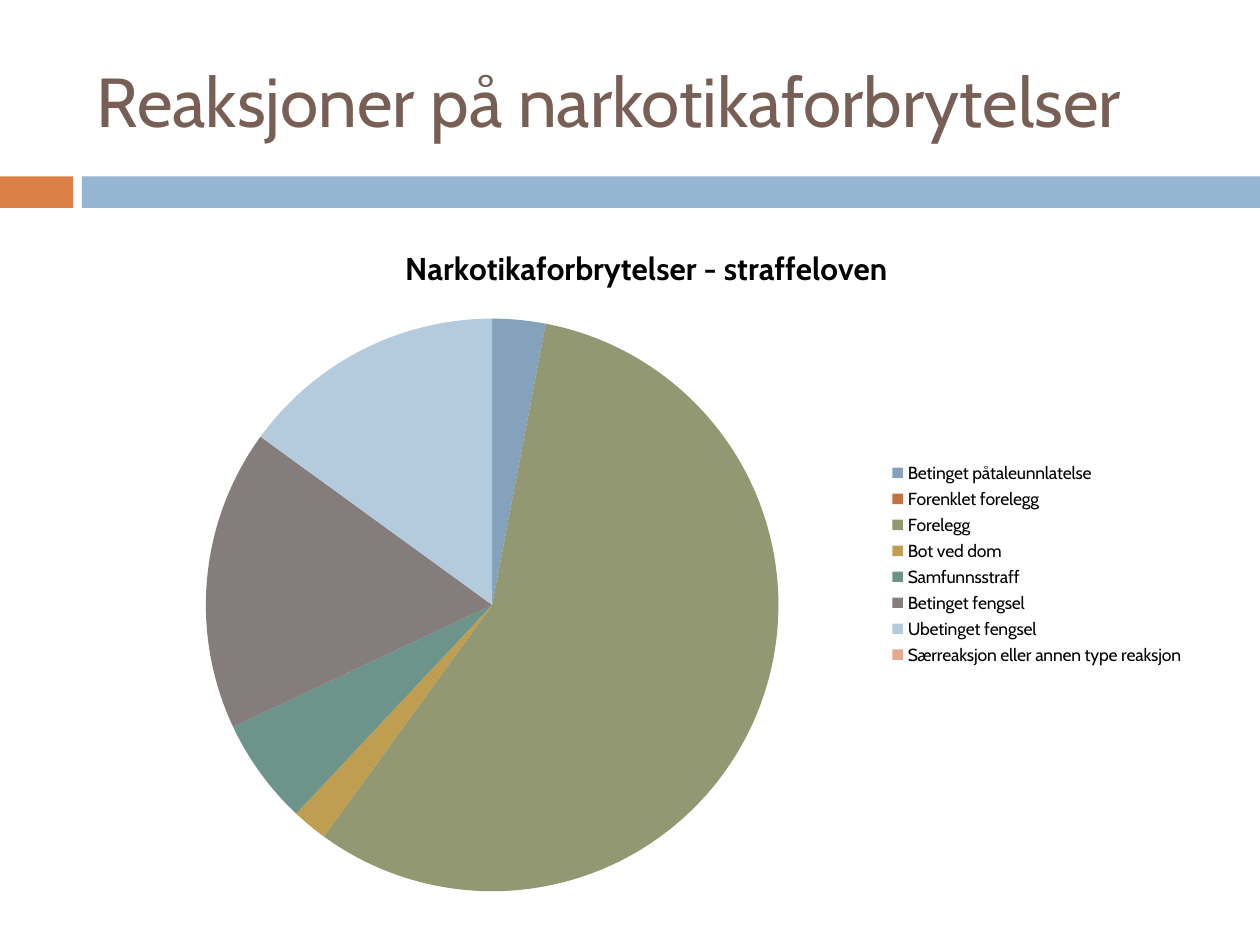
from lxml import etree
from pptx import Presentation
from pptx.chart.data import CategoryChartData
from pptx.dml.color import RGBColor
from pptx.enum.chart import XL_CHART_TYPE, XL_LEGEND_POSITION
from pptx.enum.shapes import MSO_SHAPE
from pptx.enum.text import MSO_ANCHOR
from pptx.oxml.ns import qn
from pptx.util import Inches, Pt

RECTANGLE = MSO_SHAPE.RECTANGLE
MIDDLE = MSO_ANCHOR.MIDDLE
PIE = XL_CHART_TYPE.PIE
RIGHT = XL_LEGEND_POSITION.RIGHT

WIDTH, HEIGHT = 10, 7.5
FONT = "Cabin"
BAND_TOP, BAND_HEIGHT = 1.4, 0.25
COLORS = {"title": "775F55", "accent": "DD8047", "band": "94B6D2", "text": "000000"}
CHART_TITLE = "Narkotikaforbrytelser - straffeloven"
REACTIONS = [
    ("Betinget påtaleunnlatelse", 3, "84A2BC"),
    ("Forenklet forelegg", 0, "C5713E"),
    ("Forelegg", 57, "929872"),
    ("Bot ved dom", 2, "BF9E51"),
    ("Samfunnsstraff", 6, "6C948B"),
    ("Betinget fengsel", 17, "857C7C"),
    ("Ubetinget fengsel", 15, "B4CADD"),
    ("Særreaksjon eller annen type reaksjon", 0, "E6A791"),
]
PLOT_SHARES = {"x": 0.1, "y": 0.14, "w": 0.52, "h": 0.84}


def style_font(font, size, color, bold=False):
    """Set the typeface, size, colour and weight of a font."""
    font.name = FONT
    font.size = Pt(size)
    font.bold = bold
    font.color.rgb = RGBColor.from_string(color)


def paint(fill, color):
    """Give a fill one solid colour."""
    fill.solid()
    fill.fore_color.rgb = RGBColor.from_string(color)


def add_band(slide, left, right, color):
    """Add one part of the horizontal band below the title."""
    shape = slide.shapes.add_shape(
        RECTANGLE, Inches(left), Inches(BAND_TOP), Inches(right - left), Inches(BAND_HEIGHT)
    )
    shape.shadow.inherit = False
    shape.line.fill.background()
    paint(shape.fill, color)


def add_title(slide, text):
    """Add the slide title."""
    box = slide.shapes.add_textbox(Inches(0.67), Inches(0.25), Inches(8.92), Inches(1.08))
    text_frame = box.text_frame
    text_frame.word_wrap = True
    text_frame.vertical_anchor = MIDDLE
    text_frame.text = text
    style_font(text_frame.paragraphs[0].runs[0].font, 39.6, COLORS["title"])


def place_plot(chart, shares):
    """Fix the inner plot area at shares of the chart's size."""
    plot_area = chart.plots[0]._element.getparent()
    for layout in plot_area.findall(qn("c:layout")):
        plot_area.remove(layout)
    layout = etree.Element(qn("c:layout"))
    plot_area.insert(0, layout)
    manual = etree.SubElement(layout, qn("c:manualLayout"))
    settings = {"layoutTarget": "inner", "xMode": "edge", "yMode": "edge", **shares}
    for name, value in settings.items():
        etree.SubElement(manual, qn(f"c:{name}")).set("val", str(value))


def add_pie(slide):
    """Add the pie chart of reactions with its title and legend."""
    data = CategoryChartData()
    data.categories = [name for name, _, _ in REACTIONS]
    data.add_series(CHART_TITLE, [value for _, value, _ in REACTIONS])
    chart = slide.shapes.add_chart(
        PIE, Inches(0.76), Inches(1.75), Inches(8.74), Inches(5.45), data
    ).chart
    style_font(chart.font, 10, COLORS["text"])
    chart.has_title = True
    title_frame = chart.chart_title.text_frame
    title_frame.text = CHART_TITLE
    style_font(title_frame.paragraphs[0].runs[0].font, 18, COLORS["text"], bold=True)
    chart.chart_title.include_in_layout = False
    chart.has_legend = True
    chart.legend.position = RIGHT
    chart.legend.include_in_layout = False
    style_font(chart.legend.font, 10, COLORS["text"])
    plot = chart.plots[0]
    plot.vary_by_categories = True
    for index, (_, _, color) in enumerate(REACTIONS):
        point_format = plot.series[0].points[index].format
        paint(point_format.fill, color)
        point_format.line.fill.background()
    place_plot(chart, PLOT_SHARES)


def main():
    """Build and save the slide."""
    presentation = Presentation()
    presentation.slide_width = Inches(WIDTH)
    presentation.slide_height = Inches(HEIGHT)
    slide = presentation.slides.add_slide(presentation.slide_layouts[6])
    add_band(slide, 0, 0.58, COLORS["accent"])
    add_band(slide, 0.65, WIDTH, COLORS["band"])
    add_title(slide, "Reaksjoner på narkotikaforbrytelser")
    add_pie(slide)
    presentation.save("out.pptx")


if __name__ == "__main__":
    main()
